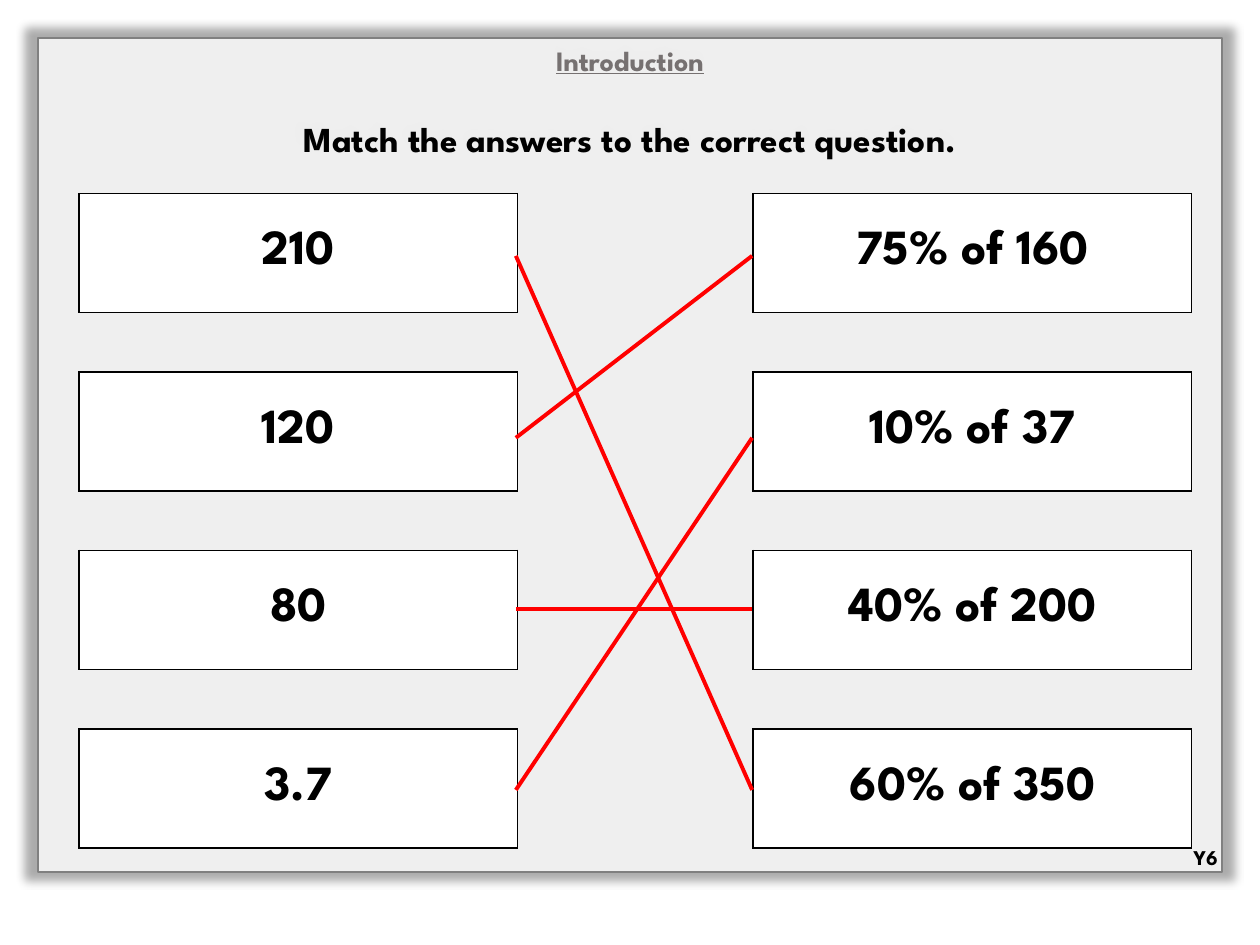
from lxml import etree
from pptx import Presentation
from pptx.dml.color import RGBColor
from pptx.enum import shapes as sh, text as tx
from pptx.oxml import parse_xml
from pptx.oxml.ns import nsdecls, qn
from pptx.util import Pt

BLACK = RGBColor(0, 0, 0)
WHITE = RGBColor(255, 255, 255)
GREY = RGBColor(0x76, 0x71, 0x71)
EDGE = RGBColor(0x80, 0x80, 0x80)
RED = RGBColor(255, 0, 0)
FONT = "League Spartan"


def style(para, size, color=BLACK):
    para.alignment = tx.PP_ALIGN.CENTER
    font = para.font
    font.name, font.size, font.bold = FONT, Pt(size), True
    font.color.rgb = color


def border(cell, sides):
    props = cell._tc.get_or_add_tcPr()
    for i, side in enumerate("LRTB"):
        fill = '<a:solidFill><a:srgbClr val="000000"/></a:solidFill>'
        if side not in sides:
            fill = "<a:noFill/>"
        props.insert(i, parse_xml(
            f'<a:ln{side} {nsdecls("a")} w="12700">{fill}</a:ln{side}>'))


prs = Presentation()
prs.slide_width, prs.slide_height = Pt(720), Pt(540)
slide = prs.slides.add_slide(prs.slide_layouts[6])

# Panel with translucent fill and soft shadow
panel = slide.shapes.add_shape(sh.MSO_SHAPE.RECTANGLE,
                               Pt(21.6), Pt(21.6), Pt(676.8), Pt(476.6))
panel.fill.solid()
panel.fill.fore_color.rgb = WHITE
tint = panel._element.spPr.find(".//" + qn("a:srgbClr"))
etree.SubElement(tint, qn("a:alpha")).set("val", "82000")
panel.line.color.rgb = EDGE
panel.line.width = Pt(1)
panel._element.spPr.append(parse_xml(
    f'<a:effectLst {nsdecls("a")}><a:outerShdw blurRad="63500" sx="102000" '
    'sy="102000" algn="ctr" rotWithShape="0"><a:srgbClr val="000000">'
    '<a:alpha val="40000"/></a:srgbClr></a:outerShdw></a:effectLst>'))

# Heading and task
frame = panel.text_frame
frame.word_wrap = True
frame.vertical_anchor = tx.MSO_ANCHOR.TOP
head = frame.paragraphs[0]
head.text = "Introduction"
style(head, 16, GREY)
head.font.underline = True
task = frame.add_paragraph()
task.text = "Match the answers to the correct question."
style(task, 20)
task.space_before = Pt(23)

# Table of answers and questions, with open gaps between the boxes
pairs = [("210", "75% of 160"), ("120", "10% of 37"),
         ("80", "40% of 200"), ("3.7", "60% of 350")]
table = slide.shapes.add_table(7, 3, Pt(45.2), Pt(110.6),
                               Pt(635.8), Pt(374)).table
table.first_row = table.horz_banding = False
for col, width in zip(table.columns, (250.6, 134.6, 250.6)):
    col.width = Pt(width)
for r, row in enumerate(table.rows):
    row.height = Pt(34 if r % 2 else 68)
    for c, cell in enumerate(row.cells):
        if r % 2 or c == 1:
            cell.fill.background()
            border(cell, "" if r % 2 and c == 1 else "TB" if r % 2 else "LR")
            continue
        cell.fill.solid()
        cell.fill.fore_color.rgb = WHITE
        border(cell, "LRTB")
        cell.vertical_anchor = tx.MSO_ANCHOR.MIDDLE
        pad = Pt(0 if c else 3.6)
        cell.margin_left = cell.margin_right = pad
        cell.margin_top = cell.margin_bottom = pad
        cell.text = pairs[r // 2][c // 2]
        style(cell.text_frame.paragraphs[0], 28)

# Matching lines: answer row to question row
rows = (146.2, 250.2, 347.8, 451.4)
for left, right in ((0, 3), (1, 0), (3, 1), (2, 2)):
    line = slide.shapes.add_connector(sh.MSO_CONNECTOR.STRAIGHT, Pt(294.8),
                                      Pt(rows[left]), Pt(429.8), Pt(rows[right]))
    line.line.color.rgb = RED
    line.line.width = Pt(2.25)
    etree.SubElement(line._element.spPr, qn("a:effectLst"))

# Year label
year = slide.shapes.add_textbox(Pt(671), Pt(478.8), Pt(36), Pt(21.6)).text_frame
year.word_wrap = True
year.auto_size = tx.MSO_AUTO_SIZE.SHAPE_TO_FIT_TEXT
year.vertical_anchor = tx.MSO_ANCHOR.MIDDLE
year.text = "Y6"
style(year.paragraphs[0], 12)

prs.save("out.pptx")
